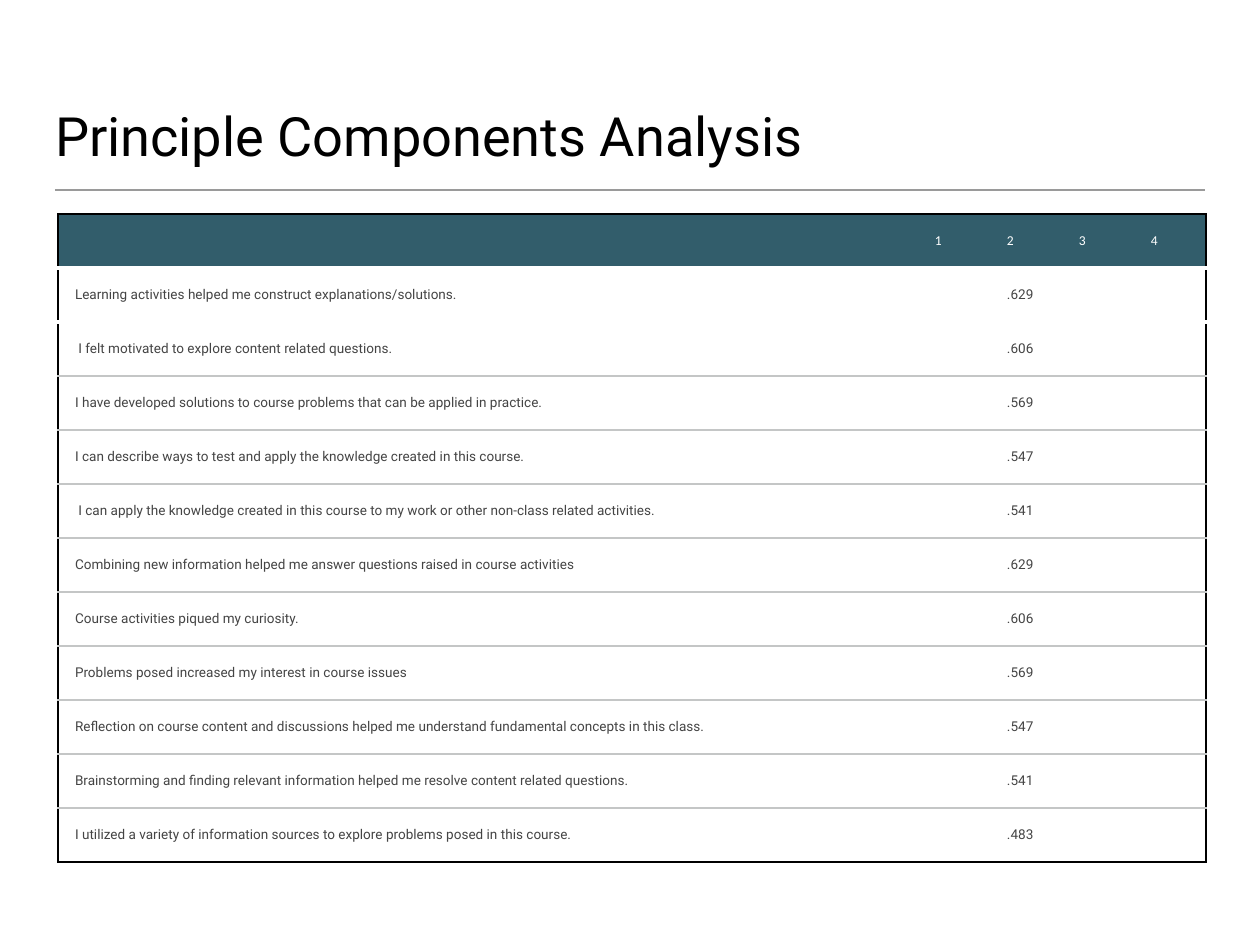
from lxml.etree import SubElement
from pptx import Presentation
from pptx.dml.color import RGBColor as RGB
from pptx.enum.shapes import MSO_CONNECTOR as LINE
from pptx.enum.text import MSO_ANCHOR as ANCHOR
from pptx.oxml.ns import qn
from pptx.util import Pt

# Content
TITLE = "Principle Components Analysis"
HEADS = ["", "1", "2", "3", "4"]
ITEMS = [
    ("Learning activities helped me construct explanations/solutions.", ".629"),
    (" I felt motivated to explore content related questions.", ".606"),
    ("I have developed solutions to course problems that can be applied in practice.", ".569"),
    ("I can describe ways to test and apply the knowledge created in this course.", ".547"),
    (" I can apply the knowledge created in this course to my work or other non-class related activities.", ".541"),
    ("Combining new information helped me answer questions raised in course activities", ".629"),
    ("Course activities piqued my curiosity.", ".606"),
    ("Problems posed increased my interest in course issues", ".569"),
    ("Reflection on course content and discussions helped me understand fundamental concepts in this class.", ".547"),
    ("Brainstorming and finding relevant information helped me resolve content related questions.", ".541"),
    ("I utilized a variety of information sources to explore problems posed in this course.", ".483"),
]
ROWS = [HEADS] + [[text, "", load, "", ""] for text, load in ITEMS]

# Colours
BLACK = RGB(0x00, 0x00, 0x00)
WHITE = RGB(0xFF, 0xFF, 0xFF)
TEAL = RGB(0x32, 0x5D, 0x6B)
INK = RGB(0x44, 0x44, 0x44)
RULE = RGB(0x9A, 0x9A, 0x9A)
GREY = RGB(0xC4, 0xC6, 0xC6)

# Lengths in px
SCALE = 10320
WIDE, HIGH = 1260, 945
LEFT, RIGHT, RULE_Y = 55, 1205, 190
TAB_X, TAB_Y, ROW_H = 58, 214, 54
COLS = [860, 72, 72, 72, 72]
PAD, INDENT = 5, 12

# Borders as colour and points
EDGE, GAP, THIN = (BLACK, 1), (WHITE, 3), (GREY, 2)


def px(n):
    return n * SCALE


def level(n):
    """Border at the n-th horizontal grid line."""
    if n in (0, len(ROWS)):
        return EDGE
    return GAP if n < 3 else THIN


def border(cell, side, look):
    props = cell._tc.get_or_add_tcPr()
    line = SubElement(props, qn("a:ln" + side))
    if look is None:
        SubElement(line, qn("a:noFill"))
        return
    color, width = look
    line.set("w", str(Pt(width)))
    fill = SubElement(line, qn("a:solidFill"))
    SubElement(fill, qn("a:srgbClr")).set("val", str(color))


def style(font, name, size, color):
    font.name, font.size = name, Pt(size)
    font.color.rgb = color


def fill_cell(cell, text, r, c):
    border(cell, "L", EDGE if c == 0 else None)
    border(cell, "R", EDGE if c == len(COLS) - 1 else None)
    border(cell, "T", level(r))
    border(cell, "B", level(r + 1))
    if r == 0:
        cell.fill.solid()
        cell.fill.fore_color.rgb = TEAL
    else:
        cell.fill.background()
    cell.vertical_anchor = ANCHOR.MIDDLE
    cell.margin_left = cell.margin_right = px(PAD)
    cell.margin_top = cell.margin_bottom = px(PAD)
    cell.text = text
    para = cell.text_frame.paragraphs[0]
    para._p.get_or_add_pPr().set("marL", str(px(INDENT)))
    if r == 0:
        style(para.font, "Calibri", 11, WHITE)
    else:
        style(para.font, "Roboto", 11, INK)


def main():
    deck = Presentation()
    deck.slide_width, deck.slide_height = px(WIDE), px(HIGH)
    slide = deck.slides.add_slide(deck.slide_layouts[6])
    shapes = slide.shapes

    # Rule under the title
    rule = shapes.add_connector(LINE.STRAIGHT, px(LEFT), px(RULE_Y), px(RIGHT), px(RULE_Y))
    rule.line.color.rgb = RULE
    rule.line.width = Pt(1)
    SubElement(rule._element.spPr, qn("a:effectLst"))

    # Title
    frame = shapes.add_textbox(px(LEFT), px(32), px(RIGHT - LEFT), px(135)).text_frame
    frame.word_wrap = True
    frame.vertical_anchor = ANCHOR.BOTTOM
    frame.margin_left = frame.margin_right = 0
    frame.margin_top = frame.margin_bottom = 0
    frame.text = TITLE
    style(frame.paragraphs[0].font, "Roboto", 44, BLACK)

    # Loadings table
    table = shapes.add_table(len(ROWS), len(COLS), px(TAB_X), px(TAB_Y),
                             px(sum(COLS)), px(ROW_H * len(ROWS))).table
    table.first_row = table.horz_banding = False
    for col, width in zip(table.columns, COLS):
        col.width = px(width)
    for r, row in enumerate(ROWS):
        for c, text in enumerate(row):
            fill_cell(table.cell(r, c), text, r, c)

    deck.save("out.pptx")


if __name__ == "__main__":
    main()
